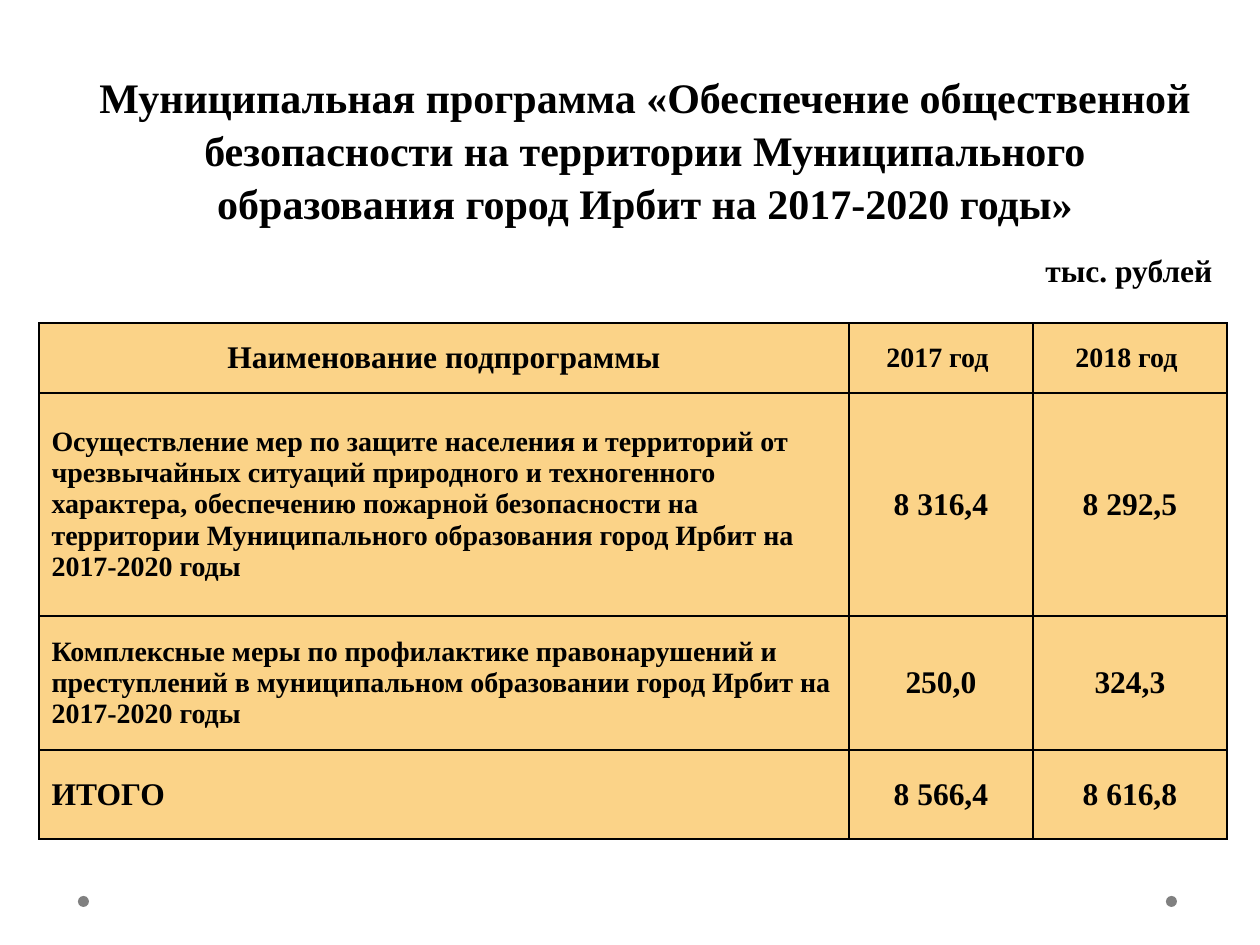
from dataclasses import dataclass

from lxml.etree import SubElement
from pptx import Presentation
from pptx.dml.color import RGBColor
from pptx.enum.shapes import MSO_SHAPE
from pptx.enum.text import MSO_ANCHOR, MSO_AUTO_SIZE, PP_ALIGN
from pptx.oxml.ns import qn
from pptx.util import Emu, Pt

EMU_PER_PX = 914400 / 126


def px(length):
    return Emu(round(length * EMU_PER_PX))


@dataclass(frozen=True)
class Theme:
    font: str = "Times New Roman"
    ink: str = "000000"
    cell: str = "FBD388"
    dot: str = "808080"
    title: int = 24
    large: int = 18
    small: int = 16
    border: int = 1


class PageBuilder:
    def __init__(self, page, theme):
        self.page = page
        self.theme = theme

    def style(self, para, size, align):
        para.alignment = align
        para.font.name = self.theme.font
        para.font.size = Pt(size)
        para.font.bold = True
        para.font.color.rgb = RGBColor.from_string(self.theme.ink)

    def title(self, text, left, top, width, height):
        box = self.page.shapes.title
        box.left, box.top, box.width, box.height = map(px, (left, top, width, height))
        frame = box.text_frame
        frame.text = text
        frame.word_wrap = True
        frame.auto_size = MSO_AUTO_SIZE.NONE
        frame.vertical_anchor = MSO_ANCHOR.BOTTOM
        para = frame.paragraphs[0]
        para.line_spacing = 1.05
        self.style(para, self.theme.title, PP_ALIGN.CENTER)

    def label(self, text, left, top, width, height):
        box = self.page.shapes.add_textbox(*map(px, (left, top, width, height)))
        frame = box.text_frame
        frame.text = text
        frame.word_wrap = False
        frame.auto_size = MSO_AUTO_SIZE.SHAPE_TO_FIT_TEXT
        self.style(frame.paragraphs[0], self.theme.large, PP_ALIGN.LEFT)

    def dot(self, left, top, size):
        dot = self.page.shapes.add_shape(MSO_SHAPE.OVAL, *map(px, (left, top, size, size)))
        dot.shadow.inherit = False
        dot.fill.solid()
        dot.fill.fore_color.rgb = RGBColor.from_string(self.theme.dot)
        dot.line.fill.background()

    def table(self, rows, sizes, left, top, widths, heights):
        frame = self.page.shapes.add_table(
            len(rows), len(widths), px(left), px(top), px(sum(widths)), px(sum(heights)))
        table = frame.table
        table.first_row = False
        table.horz_banding = False
        for column, width in zip(table.columns, widths):
            column.width = px(width)
        for row, height in zip(table.rows, heights):
            row.height = px(height)
        for r, (texts, row_sizes) in enumerate(zip(rows, sizes)):
            for c, (text, size) in enumerate(zip(texts, row_sizes)):
                align = PP_ALIGN.LEFT if r > 0 and c == 0 else PP_ALIGN.CENTER
                self.cell(table.cell(r, c), text, size, align)

    def cell(self, cell, text, size, align):
        cell.text = text
        cell.vertical_anchor = MSO_ANCHOR.MIDDLE
        self.style(cell.text_frame.paragraphs[0], size, align)
        properties = cell._tc.get_or_add_tcPr()
        for side in ("a:lnL", "a:lnR", "a:lnT", "a:lnB"):
            line = SubElement(properties, qn(side), w=str(Pt(self.theme.border)))
            fill = SubElement(line, qn("a:solidFill"))
            SubElement(fill, qn("a:srgbClr"), val=self.theme.ink)
        cell.fill.solid()
        cell.fill.fore_color.rgb = RGBColor.from_string(self.theme.cell)


def main():
    deck = Presentation()
    deck.slide_width, deck.slide_height = px(1260), px(945)
    theme = Theme()
    builder = PageBuilder(deck.slides.add_slide(deck.slide_layouts[5]), theme)

    for left in (1166, 78):
        builder.dot(left, 896, 11)
    builder.title(
        "Муниципальная программа «Обеспечение общественной безопасности на территории "
        "Муниципального образования город Ирбит на 2017-2020 годы»",
        78, 55, 1134, 179)

    rows = [
        ("Наименование подпрограммы", "2017 год ", "2018 год "),
        ("Осуществление мер по защите населения и территорий от чрезвычайных ситуаций "
         "природного и техногенного характера, обеспечению пожарной безопасности на "
         "территории Муниципального образования город Ирбит на 2017-2020 годы",
         "8 316,4", "8 292,5"),
        ("Комплексные меры по профилактике правонарушений и преступлений в "
         "муниципальном образовании город Ирбит на 2017-2020 годы",
         "250,0", "324,3"),
        ("ИТОГО", "8 566,4", "8 616,8"),
    ]
    large, small = theme.large, theme.small
    sizes = [
        (large, small, small),
        (small, large, large),
        (small, large, large),
        (large, large, large),
    ]
    builder.table(rows, sizes, 39, 323, (810, 184, 194), (70, 223, 134, 89))
    builder.label("тыс. рублей", 1033, 245, 194, 50)

    deck.save("out.pptx")


if __name__ == "__main__":
    main()
